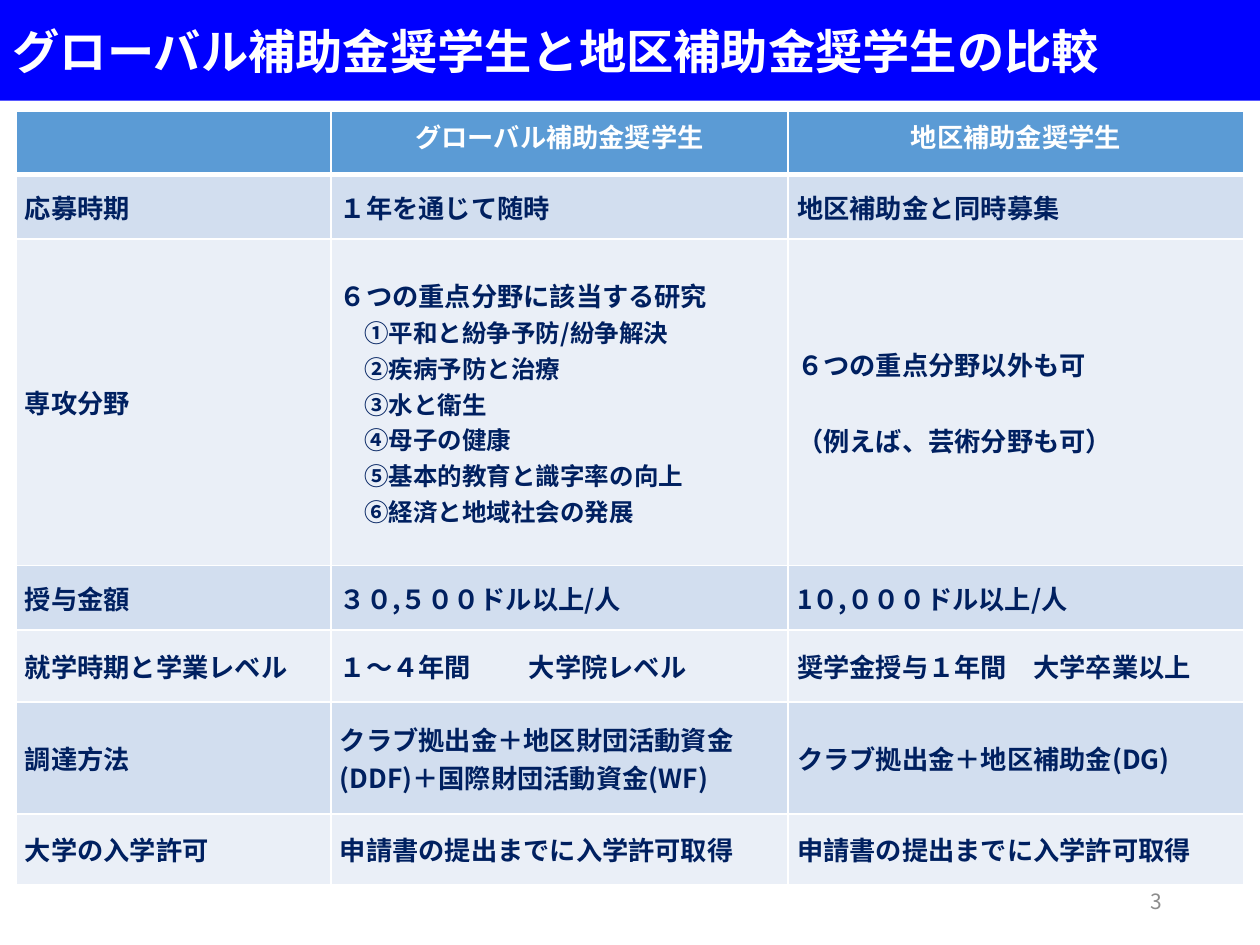
from lxml import etree
from pptx import Presentation
from pptx.dml.color import RGBColor
from pptx.enum.text import MSO_ANCHOR, PP_ALIGN
from pptx.oxml.ns import qn
from pptx.util import Cm, Pt

FONT = "Noto Sans CJK JP"
WHITE = RGBColor(0xFF, 0xFF, 0xFF)
BLUE = RGBColor(0x00, 0x00, 0xFF)
HEADER = RGBColor(0x5B, 0x9B, 0xD5)
BAND_DARK = RGBColor(0xD2, 0xDE, 0xEF)
BAND_LIGHT = RGBColor(0xEA, 0xEF, 0xF7)
NAVY = RGBColor(0x00, 0x20, 0x60)
GREY = RGBColor(0x8C, 0x8C, 0x8C)
LEFT, CENTER, RIGHT = PP_ALIGN.LEFT, PP_ALIGN.CENTER, PP_ALIGN.RIGHT
TOP, MIDDLE = MSO_ANCHOR.TOP, MSO_ANCHOR.MIDDLE
TITLE_ONLY = 5

COLUMNS = [6.35, 9.22, 9.18]
ROW_HEIGHTS = [1.27, 1.3, 6.58, 1.3, 1.45, 2.26, 1.42]
FIELDS = ["平和と紛争予防/紛争解決", "疾病予防と治療", "水と衛生", "母子の健康",
          "基本的教育と識字率の向上", "経済と地域社会の発展"]
# A cell is a string, or a list of (text, format) paragraphs.
MAJORS = [("６つの重点分野に該当する研究", {})] + [
    (number + field, {"size": 14, "indent": 0.49})
    for number, field in zip("①②③④⑤⑥", FIELDS)]
OTHER_MAJORS = [("６つの重点分野以外も可", {}),
                ("（例えば、芸術分野も可）", {"before": 21.7})]
ROWS = [
    ["", "グローバル補助金奨学生", "地区補助金奨学生"],
    ["応募時期", "１年を通じて随時", "地区補助金と同時募集"],
    ["専攻分野", MAJORS, OTHER_MAJORS],
    ["授与金額", "３０,５００ドル以上/人", "1０,０００ドル以上/人"],
    ["就学時期と学業レベル", [("１～４年間\t大学院レベル", {"tab": 3.69})],
     "奨学金授与１年間　大学卒業以上"],
    ["調達方法", "クラブ拠出金＋地区財団活動資金(DDF)＋国際財団活動資金(WF)",
     "クラブ拠出金＋地区補助金(DG)"],
    ["大学の入学許可", "申請書の提出までに入学許可取得", "申請書の提出までに入学許可取得"],
]


def write(p, text, size=15, color=NAVY, bold=True, align=LEFT,
          indent=0, before=0, tab=None):
    """Fill a paragraph; indent and tab are in cm, before is in points."""
    p.alignment = align
    p.space_before = Pt(before)
    pPr = p._p.get_or_add_pPr()
    pPr.set("marL", str(Cm(indent)))
    pPr.set("indent", "0")
    if tab:
        tabs = etree.SubElement(pPr, qn("a:tabLst"))
        etree.SubElement(tabs, qn("a:tab"), pos=str(Cm(tab)), algn="l")
    r = p.add_run()
    r.text = text
    r.font.size = Pt(size)
    r.font.bold = bold
    r.font.color.rgb = color
    r.font.name = FONT
    etree.SubElement(r._r.get_or_add_rPr(), qn("a:ea"), typeface=FONT)


def add_border(cell, side, width):
    ln = etree.SubElement(cell._tc.get_or_add_tcPr(), qn("a:ln" + side),
                          w=str(Pt(width)))
    fill = etree.SubElement(ln, qn("a:solidFill"))
    etree.SubElement(fill, qn("a:srgbClr"), val=str(WHITE))


class Deck:
    def __init__(self):
        self.prs = Presentation()
        self.prs.slide_width, self.prs.slide_height = Cm(25.4), Cm(19.05)
        self.s = self.prs.slides.add_slide(self.prs.slide_layouts[TITLE_ONLY])

    def title(self, text, height):
        sp = self.s.shapes.title
        sp.left, sp.top = Cm(0), Cm(0)
        sp.width, sp.height = self.prs.slide_width, Cm(height)
        sp.fill.solid()
        sp.fill.fore_color.rgb = BLUE
        tf = sp.text_frame
        tf.vertical_anchor = MIDDLE
        write(tf.paragraphs[0], text, size=27, color=WHITE)

    def table(self, left, top):
        shape = self.s.shapes.add_table(
            len(ROWS), len(COLUMNS), Cm(left), Cm(top),
            Cm(sum(COLUMNS)), Cm(sum(ROW_HEIGHTS)))
        table = shape.table
        for column, width in zip(table.columns, COLUMNS):
            column.width = Cm(width)
        for i, (row, height) in enumerate(zip(ROWS, ROW_HEIGHTS)):
            table.rows[i].height = Cm(height)
            for j, content in enumerate(row):
                self.cell(table.cell(i, j), content, i)

    def cell(self, cell, content, row):
        is_header = row == 0
        cell.margin_left = cell.margin_right = Cm(0.18)
        cell.margin_top = cell.margin_bottom = Cm(0.1)
        cell.vertical_anchor = TOP if is_header else MIDDLE
        for side in "LRTB":
            thick = (row, side) in ((0, "B"), (1, "T"))
            add_border(cell, side, 3 if thick else 1)
        cell.fill.solid()
        band = BAND_DARK if row % 2 else BAND_LIGHT
        cell.fill.fore_color.rgb = HEADER if is_header else band
        if not content:
            return
        style = {"color": WHITE, "align": CENTER} if is_header else {}
        lines = [(content, style)] if isinstance(content, str) else content
        tf = cell.text_frame
        for k, (text, fmt) in enumerate(lines):
            write(tf.add_paragraph() if k else tf.paragraphs[0], text, **fmt)

    def text(self, text, left, top, width, height, **fmt):
        sp = self.s.shapes.add_textbox(Cm(left), Cm(top), Cm(width), Cm(height))
        tf = sp.text_frame
        tf.word_wrap = True
        tf.vertical_anchor = MIDDLE
        write(tf.paragraphs[0], text, **fmt)


def main():
    deck = Deck()
    deck.title("グローバル補助金奨学生と地区補助金奨学生の比較", 2.03)
    deck.table(0.32, 2.25)
    deck.text("3", 22.58, 17.65, 1.09, 1.02,
              size=12, color=GREY, bold=False, align=RIGHT)
    deck.prs.save("out.pptx")


if __name__ == "__main__":
    main()
